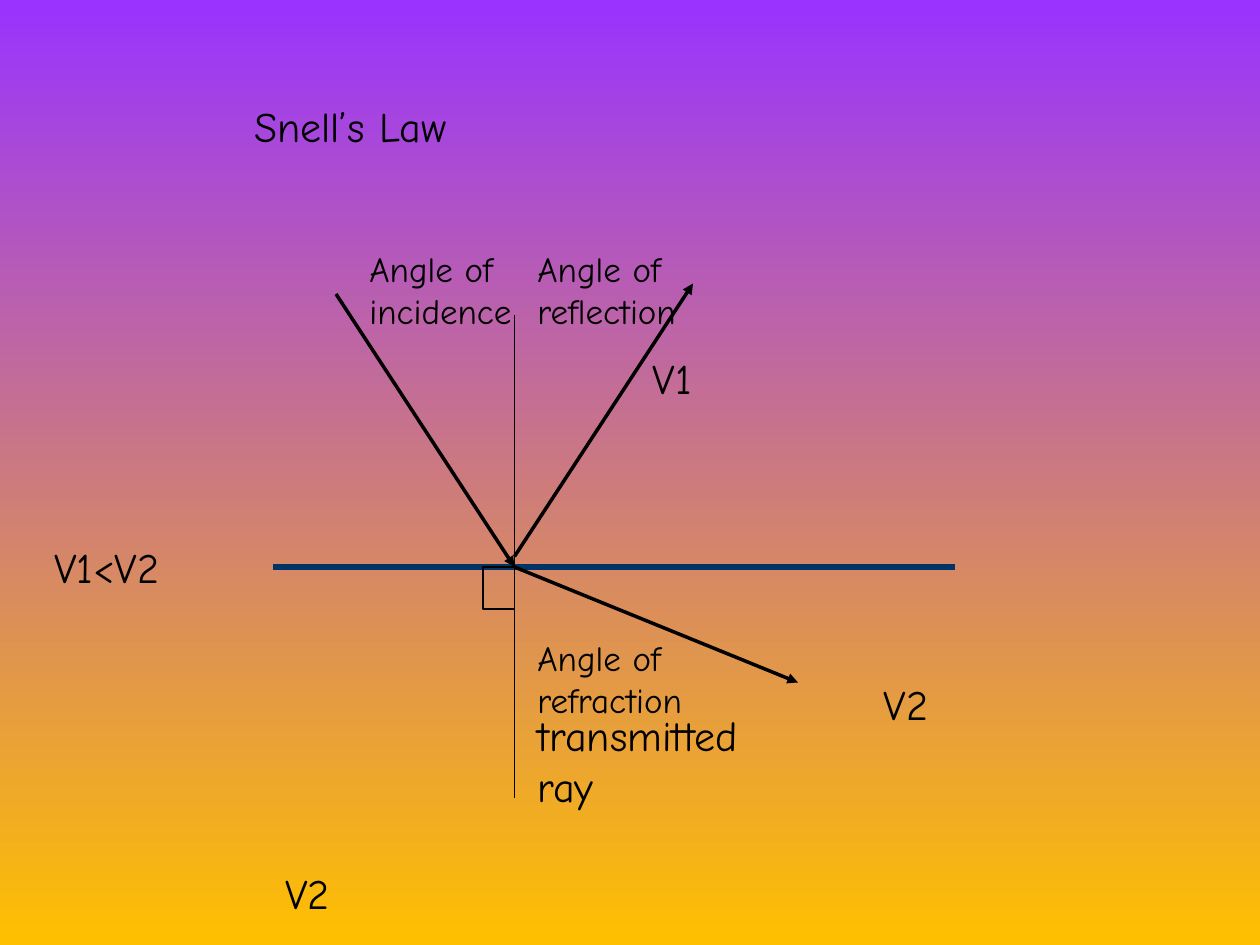
from dataclasses import dataclass

from lxml.etree import SubElement
from pptx import Presentation
from pptx.dml.color import RGBColor
from pptx.enum.shapes import MSO_CONNECTOR, MSO_SHAPE
from pptx.enum.text import MSO_ANCHOR, MSO_AUTO_SIZE, PP_ALIGN
from pptx.oxml.ns import qn
from pptx.util import Pt

PX = 9525  # EMU in one px, 96 px to the inch


@dataclass(frozen=True)
class Theme:
    font: str = "Comic Neue"
    ink: RGBColor = RGBColor(0x00, 0x00, 0x00)
    boundary: RGBColor = RGBColor(0x00, 0x33, 0x66)
    sky: RGBColor = RGBColor(0x99, 0x33, 0xFF)
    ground: RGBColor = RGBColor(0xFF, 0xC0, 0x00)
    large: int = 24
    small: int = 20
    hairline: float = 0.75
    ray: int = 2
    thick: int = 3


theme = Theme()


def write(text, left, top, width, height, size=theme.large, box=None):
    """Fill the given box, or a new text box, with one paragraph per line of text."""
    if box is None:
        box = page.shapes.add_textbox(0, 0, 0, 0)
    box.left, box.top, box.width, box.height = (
        value * PX for value in (left, top, width, height))
    frame = box.text_frame
    frame.word_wrap = True
    frame.auto_size = MSO_AUTO_SIZE.NONE
    frame.vertical_anchor = MSO_ANCHOR.TOP
    frame.text = text
    for para in frame.paragraphs:
        para.alignment = PP_ALIGN.LEFT
        for span in para.runs:
            span.font.name = theme.font
            span.font.size = Pt(size)
            span.font.color.rgb = theme.ink


def draw_line(start, end, width, color=theme.ink, arrow=False):
    line = page.shapes.add_connector(
        MSO_CONNECTOR.STRAIGHT, *(value * PX for value in (*start, *end)))
    line.line.color.rgb = color
    line.line.width = Pt(width)
    if arrow:
        SubElement(line.line._get_or_add_ln(), qn("a:tailEnd"), type="triangle")
    SubElement(line._element.spPr, qn("a:effectLst"))


deck = Presentation()
deck.slide_width, deck.slide_height = 960 * PX, 720 * PX
page = deck.slides.add_slide(deck.slide_layouts[5])

background = page.background.fill
background.gradient()
background.gradient_angle = 270
for stop, color in zip(background.gradient_stops, (theme.sky, theme.ground)):
    stop.color.rgb = color

write("Snell’s Law", 184, 72, 520, 48, box=page.shapes.title)

# Boundary between the media, its normal, and the rays that meet there
hit_x, hit_y = 392, 432
draw_line((208, hit_y), (728, hit_y), theme.thick, color=theme.boundary)
draw_line((hit_x, 240), (hit_x, 608), theme.hairline)
for start, end in (
    ((256, 224), (hit_x, hit_y)),
    ((hit_x, hit_y), (608, 520)),
    ((hit_x, 424), (528, 216)),
):
    draw_line(start, end, theme.ray, arrow=True)

right_angle = page.shapes.add_shape(
    MSO_SHAPE.RECTANGLE, (hit_x - 24) * PX, hit_y * PX, 24 * PX, 32 * PX)
right_angle.shadow.inherit = False
right_angle.fill.background()
right_angle.line.color.rgb = theme.ink
right_angle.line.width = Pt(theme.hairline)

for text, left, top in (
    ("V1", 488, 264),
    ("V2", 664, 512),
    ("V1<V2", 32, 408),
    ("V2", 208, 656),
):
    write(text, left, top, 112, 48)

for text, left, top in (
    ("Angle of incidence", 272, 184),
    ("Angle of reflection", 400, 184),
    ("Angle of refraction", 400, 480),
):
    write(text, left, top, 184, 74, size=theme.small)

write("transmitted\nray", 400, 536, 199, 86)

deck.save("out.pptx")
